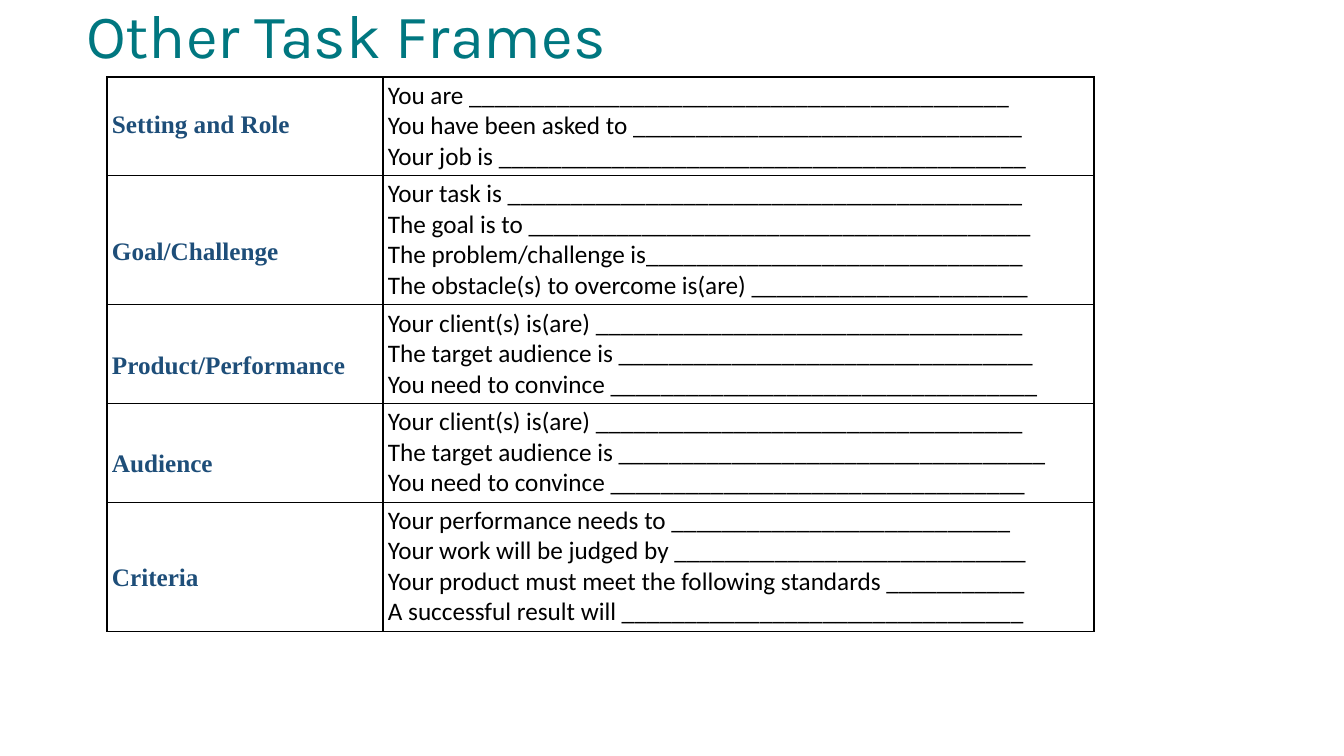
"""Build the "Other Task Frames" slide: a title above a table of sentence starters."""
from lxml.etree import SubElement
from pptx import Presentation
from pptx.dml.color import RGBColor
from pptx.enum.text import MSO_ANCHOR, PP_ALIGN
from pptx.oxml.ns import qn
from pptx.util import Pt

PX = 914400 / 100.8
COLORS = {"title": "007780", "label": "1E4E79", "text": "000000", "border": "000000"}
FRAMES = [
    ("Setting and Role", [("You are ", 43), ("You have been asked to ", 31),
                          ("Your job is ", 42)]),
    ("Goal/Challenge", [("Your task is ", 41), ("The goal is to ", 40),
                        ("The problem/challenge is", 30),
                        ("The obstacle(s) to overcome is(are) ", 22)]),
    ("Product/Performance", [("Your client(s) is(are) ", 34), ("The target audience is ", 33),
                             ("You need to convince ", 34)]),
    ("Audience", [("Your client(s) is(are) ", 34), ("The target audience is ", 34),
                  ("You need to convince ", 33)]),
    ("Criteria", [("Your performance needs to ", 27), ("Your work will be judged by ", 28),
                  ("Your product must meet the following standards ", 11),
                  ("A successful result will ", 32)]),
]


def px(length):
    return round(length * PX)


def style(paragraph, font_name, size, color, bold=False):
    paragraph.line_spacing = 0.9
    paragraph.alignment = PP_ALIGN.LEFT
    for run in paragraph.runs:
        run.font.name = font_name
        run.font.size = Pt(size)
        run.font.bold = bold
        run.font.color.rgb = RGBColor.from_string(COLORS[color])


prs = Presentation()
prs.slide_width, prs.slide_height = px(1344), px(756)
slide = prs.slides.add_slide(prs.slide_layouts[5])

title = slide.shapes.title
title.left, title.top, title.width, title.height = px(76), px(0), px(948), px(145)
title.text_frame.text = "Other Task Frames"
title.text_frame.vertical_anchor = MSO_ANCHOR.TOP
style(title.text_frame.paragraphs[0], "Karla", 44, "title")

row_heights = [93 if len(starters) == 3 else 121 for _, starters in FRAMES]
frames_table = slide.shapes.add_table(
    len(FRAMES), 2, px(107), px(77), px(987), px(sum(row_heights))).table
frames_table.first_row = False
frames_table.horz_banding = False
frames_table.columns[0].width, frames_table.columns[1].width = px(276), px(711)

for row, (label, starters) in enumerate(FRAMES):
    frames_table.rows[row].height = px(row_heights[row])
    label_cell, starters_cell = frames_table.cell(row, 0), frames_table.cell(row, 1)
    label_cell.text_frame.text = label
    style(label_cell.text_frame.paragraphs[0], "Times New Roman", 18, "label", True)
    starters_cell.text_frame.text = "\n".join(
        starter + "_" * blanks for starter, blanks in starters)
    for line, paragraph in enumerate(starters_cell.text_frame.paragraphs):
        style(paragraph, "Calibri", 18, "text")
        paragraph.space_before = Pt(2 if line else 0)

    for cell in (label_cell, starters_cell):
        cell.vertical_anchor = MSO_ANCHOR.MIDDLE
        cell.margin_left = cell.margin_right = px(5)
        cell.margin_top = cell.margin_bottom = px(5)
        for side in ("a:lnL", "a:lnR", "a:lnT", "a:lnB"):
            border = SubElement(cell._tc.get_or_add_tcPr(), qn(side), w=str(Pt(1)))
            border_fill = SubElement(border, qn("a:solidFill"))
            SubElement(border_fill, qn("a:srgbClr"), val=COLORS["border"])
        cell.fill.background()
    if row:
        label_cell.margin_top = px(30)

prs.save("out.pptx")
